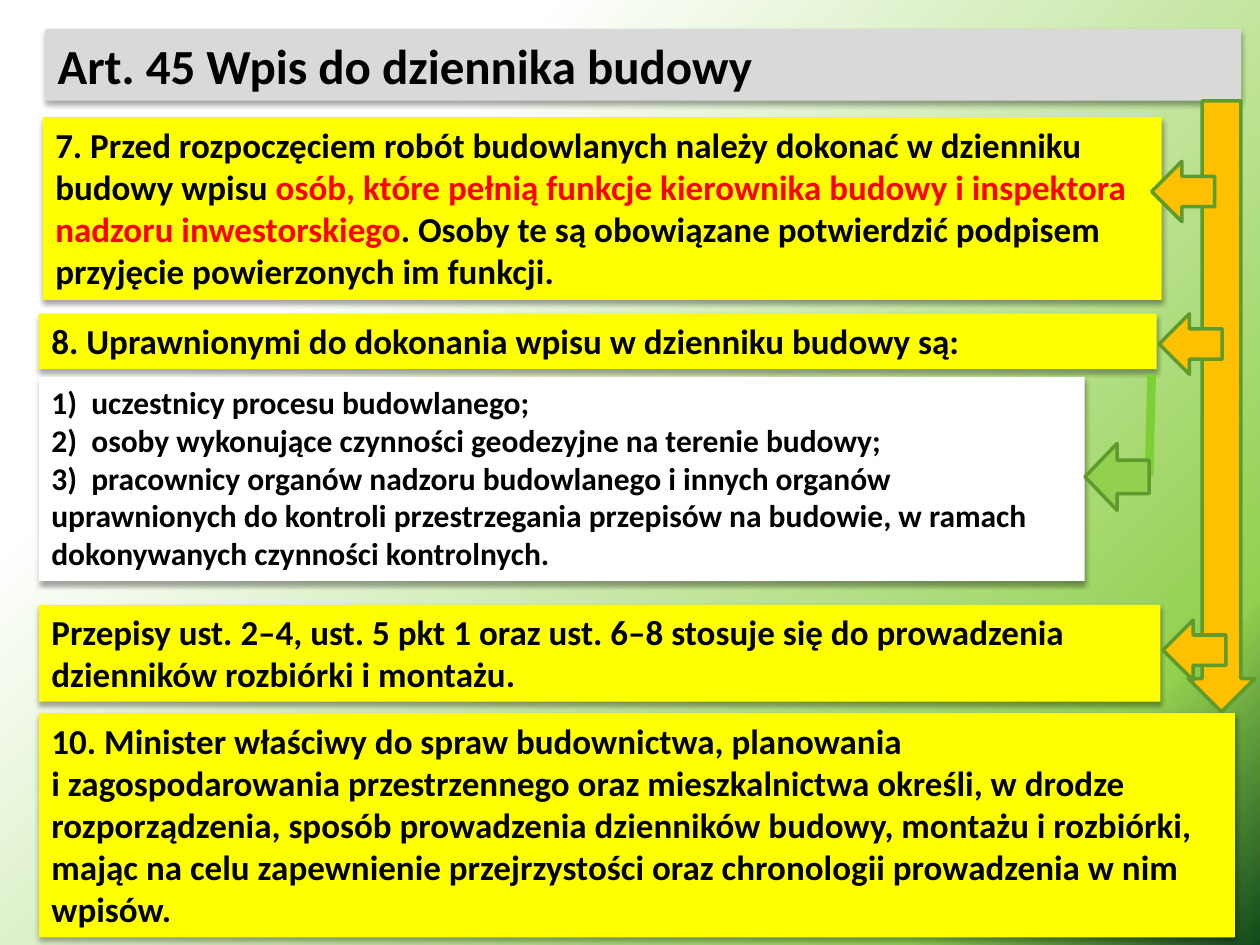
from dataclasses import dataclass
from typing import Optional

from pptx import Presentation
from pptx.dml.color import RGBColor
from pptx.enum.shapes import MSO_CONNECTOR as Connector, MSO_SHAPE as Preset
from pptx.enum.text import MSO_ANCHOR as Anchor, MSO_AUTO_SIZE as AutoSize, PP_ALIGN as Align
from pptx.oxml import parse_xml
from pptx.oxml.ns import nsdecls, qn
from pptx.slide import Slide
from pptx.util import Inches, Pt


@dataclass(frozen=True)
class Theme:
    font: str = "Calibri"
    title_size: int = 28
    body_size: int = 20
    list_size: int = 18
    ink: str = "000000"
    accent: str = "FF0000"
    title_fill: str = "D9D9D9"
    rule_fill: str = "FFFF00"
    list_fill: str = "FFFFFF"
    flow: str = "FFC000"
    branch: str = "92D050"
    outline: str = "5E9B2C"
    branch_line: str = "7CD036"
    backdrop: tuple = ((0, "124A1B", 90), (16, "92D050", 61), (75, "FFFFFF", 0))


THEME = Theme()


@dataclass(frozen=True)
class Span:
    text: str
    color: str = THEME.ink


@dataclass(frozen=True)
class Panel:
    left: float
    top: float
    width: float
    height: float
    paragraphs: tuple[tuple[Span, ...], ...]
    fill: str = THEME.rule_fill
    size: int = THEME.body_size


@dataclass(frozen=True)
class Arrow:
    left: float
    top: float
    width: float = 0.48
    height: float = 0.5
    fill: str = THEME.flow
    rotation: int = 90
    shaft: Optional[float] = None


def lines(*texts: str) -> tuple[tuple[Span, ...], ...]:
    """Make one single-colour paragraph of each text."""
    return tuple((Span(text),) for text in texts)


TITLE = Panel(0.36, 0.23, 9.49, 0.57, lines("Art. 45 Wpis do dziennika budowy"),
              THEME.title_fill, THEME.title_size)
ENTRY_OF_PERSONS = Panel(0.34, 0.93, 8.88, 1.45, (
    (Span("7. Przed rozpoczęciem robót budowlanych należy dokonać w dzienniku"),),
    (Span("budowy wpisu "),
     Span("osób, które pełnią funkcje kierownika budowy i inspektora "
          "nadzoru inwestorskiego", THEME.accent),
     Span(". Osoby te są obowiązane potwierdzić podpisem "
          "przyjęcie powierzonych im funkcji.")),
))
AUTHORIZED = Panel(0.31, 2.49, 8.87, 0.44, lines(
    "8. Uprawnionymi do dokonania wpisu w dzienniku budowy są:"))
DEMOLITION_LOGS = Panel(0.31, 4.8, 8.9, 0.77, lines(
    "Przepisy ust. 2–4, ust. 5 pkt 1 oraz ust. 6–8 stosuje się do prowadzenia",
    "dzienników rozbiórki i montażu."))
AUTHORIZED_LIST = Panel(0.31, 2.99, 8.3, 1.62, lines(
    "1)  uczestnicy procesu budowlanego;",
    "2)  osoby wykonujące czynności geodezyjne na terenie budowy;",
    "3)  pracownicy organów nadzoru budowlanego i innych organów",
    "uprawnionych do kontroli przestrzegania przepisów na budowie, w ramach "
    "dokonywanych czynności kontrolnych."), THEME.list_fill, THEME.list_size)
MINISTER = Panel(0.31, 5.66, 9.49, 1.78, lines(
    "10. Minister właściwy do spraw budownictwa, planowania",
    "i zagospodarowania przestrzennego oraz mieszkalnictwa określi, w drodze "
    "rozporządzenia, sposób prowadzenia dzienników budowy, montażu i rozbiórki, "
    "mając na celu zapewnienie przejrzystości oraz chronologii prowadzenia w nim wpisów."))

MAIN_FLOW = Arrow(9.43, 0.8, 0.53, 4.85, rotation=0, shaft=0.58)
TO_PERSONS = Arrow(9.15, 1.27)
TO_AUTHORIZED = Arrow(9.21, 2.48)
TO_LIST = Arrow(8.6, 3.53, 0.53, 0.51, THEME.branch)
TO_DEMOLITION = Arrow(9.24, 4.91)


def paint_backdrop(slide: Slide) -> None:
    """Fill the slide with a radial gradient from the lower right corner."""
    stops = "".join(
        f'<a:gs pos="{position * 1000}"><a:srgbClr val="{color}">'
        f'<a:alpha val="{alpha * 1000}"/></a:srgbClr></a:gs>'
        for position, color, alpha in THEME.backdrop)
    slide.element.find(qn("p:cSld")).insert(0, parse_xml(
        f'<p:bg {nsdecls("p", "a")}><p:bgPr><a:gradFill><a:gsLst>{stops}</a:gsLst>'
        '<a:path path="circle"><a:fillToRect l="100000" t="100000"/></a:path>'
        '</a:gradFill><a:effectLst/></p:bgPr></p:bg>'))


def draw_panel(slide: Slide, panel: Panel) -> None:
    """Draw a filled text panel with a soft shadow below."""
    shape = slide.shapes.add_shape(
        Preset.RECTANGLE, Inches(panel.left), Inches(panel.top),
        Inches(panel.width), Inches(panel.height))
    shape.fill.solid()
    shape.fill.fore_color.rgb = RGBColor.from_string(panel.fill)
    shape.line.fill.background()
    shape.shadow.inherit = False
    shape.element.spPr.find(qn("a:effectLst")).append(parse_xml(
        f'<a:outerShdw {nsdecls("a")} blurRad="{Pt(3.1)}" dist="{Pt(1.8)}" '
        'dir="5400000" rotWithShape="0"><a:srgbClr val="000000">'
        '<a:alpha val="35000"/></a:srgbClr></a:outerShdw>'))
    frame = shape.text_frame
    frame.word_wrap = True
    frame.auto_size = AutoSize.SHAPE_TO_FIT_TEXT
    frame.vertical_anchor = Anchor.TOP
    for index, spans in enumerate(panel.paragraphs):
        paragraph = frame.add_paragraph() if index else frame.paragraphs[0]
        paragraph.alignment = Align.LEFT
        for span in spans:
            run = paragraph.add_run()
            run.text = span.text
            run.font.name = THEME.font
            run.font.size = Pt(panel.size)
            run.font.bold = True
            run.font.color.rgb = RGBColor.from_string(span.color)


def draw_arrow(slide: Slide, arrow: Arrow) -> None:
    """Draw an outlined block arrow."""
    shape = slide.shapes.add_shape(
        Preset.DOWN_ARROW, Inches(arrow.left), Inches(arrow.top),
        Inches(arrow.width), Inches(arrow.height))
    shape.rotation = arrow.rotation
    if arrow.shaft is not None:
        shape.adjustments[0] = arrow.shaft
    shape.shadow.inherit = False
    shape.fill.solid()
    shape.fill.fore_color.rgb = RGBColor.from_string(arrow.fill)
    shape.line.color.rgb = RGBColor.from_string(THEME.outline)
    shape.line.width = Pt(2)


def draw_branch(slide: Slide) -> None:
    """Draw the line that leads from point 8 to its list."""
    branch = slide.shapes.add_connector(
        Connector.STRAIGHT, Inches(9.14), Inches(2.97), Inches(9.12), Inches(3.78))
    branch.line.color.rgb = RGBColor.from_string(THEME.branch_line)
    branch.line.width = Pt(5)
    branch.element.spPr.append(parse_xml(f'<a:effectLst {nsdecls("a")}/>'))


def main() -> None:
    """Build the slide and save it."""
    deck = Presentation()
    deck.slide_width, deck.slide_height = Inches(10), Inches(7.5)
    slide = deck.slides.add_slide(deck.slide_layouts[6])
    paint_backdrop(slide)
    draw_panel(slide, TITLE)
    draw_arrow(slide, MAIN_FLOW)
    draw_panel(slide, ENTRY_OF_PERSONS)
    draw_arrow(slide, TO_PERSONS)
    for panel in (AUTHORIZED, DEMOLITION_LOGS):
        draw_panel(slide, panel)
    draw_arrow(slide, TO_AUTHORIZED)
    draw_panel(slide, AUTHORIZED_LIST)
    draw_branch(slide)
    draw_arrow(slide, TO_LIST)
    draw_panel(slide, MINISTER)
    draw_arrow(slide, TO_DEMOLITION)
    deck.save("out.pptx")


if __name__ == "__main__":
    main()
